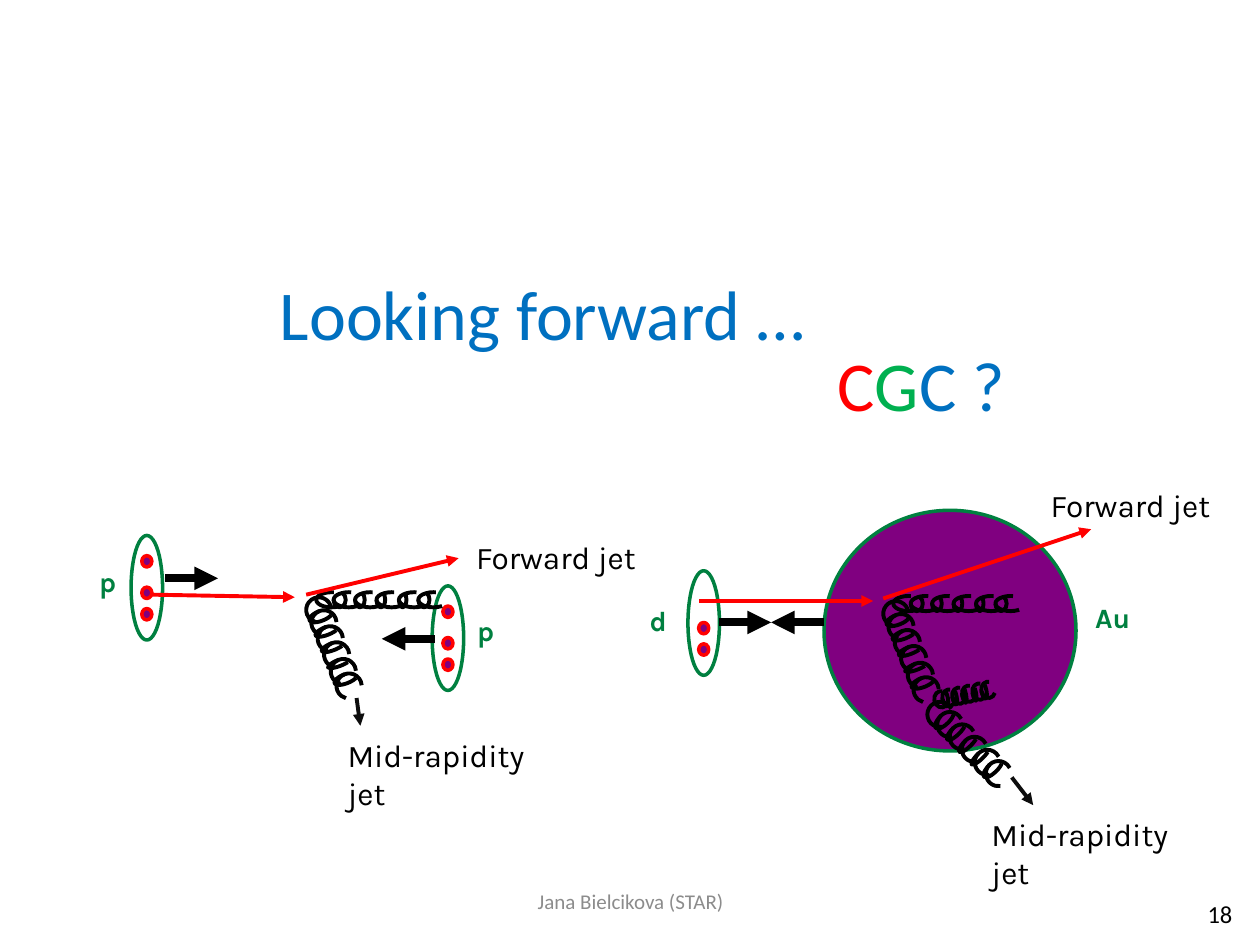
"""Build the slide on forward jets in p+p and d+Au collisions."""
from math import cos, radians, sin

from lxml.etree import SubElement
from pptx import Presentation
from pptx.dml.color import RGBColor
from pptx.enum.shapes import MSO_CONNECTOR, MSO_SHAPE
from pptx.enum.text import MSO_ANCHOR, MSO_AUTO_SIZE, PP_ALIGN
from pptx.oxml.ns import qn
from pptx.util import Pt

PX = 9144
COLORS = {
    "blue": "0070C0", "red": "FF0000", "green": "00B050", "black": "000000",
    "soft_black": "0D0D0D", "outline": "008040", "nucleus": "800080", "gray": "8C8C8C",
}

TITLE = ((212, 210, 441, 77), [("Looking forward …", "blue")])
QUESTION = ((655, 266, 154, 77), [("C", "red"), ("G", "green"), ("C ?", "blue")])
FOOTER = ((342, 695, 317, 40), [("Jana Bielcikova (STAR)", "gray")])
PAGE = ((755, 705, 233, 40), [("18", "black")])

COLLISIONS = [
    {
        "nuclei": [],
        "nucleons": [((104, 425), (16, 41, 58)), ((343, 465), (16, 41, 58))],
        "coils": [((263, 476), 0, 81, (24, 12)), ((253, 484), 68.3, 65, (20, 20))],
        "arrows": [
            ((121, 472), (234, 474), "red", 2.25),
            ((243, 472), (364, 443), "red", 2.25),
            ((283, 554), (286, 576), "soft_black", 2.25),
            ((131, 459), (173, 459), "black", 4.5),
            ((345, 507), (303, 507), "black", 4.5),
        ],
        "beams": [("p", (62, 443, 47, 37)), ("p", (362, 482, 47, 37))],
        "jets": [("Forward jet", (368, 422, 147, 40), False),
                 ("Mid-rapidity jet", (266, 579, 188, 40), True)],
    },
    {
        "nuclei": [(654, 405, 200, 191)],
        "nucleons": [((546, 453), (41, 58))],
        "coils": [((721, 479), 0, 81, (24, 12)), ((746, 567), 45.3, 66, (20, 20)),
                  ((711, 487), 68.3, 65, (20, 20)), ((747, 555), -11.3, 38, (11, 13))],
        "arrows": [
            ((571, 494), (612, 494), "black", 4.5),
            ((654, 494), (612, 494), "black", 4.5),
            ((555, 477), (693, 477), "red", 2.25),
            ((803, 617), (820, 639), "soft_black", 2.25),
            ((701, 475), (866, 420), "red", 2.25),
        ],
        "beams": [("d", (496, 474, 53, 37)), ("Au", (846, 475, 74, 30))],
        "jets": [("Forward jet", (824, 381, 147, 40), False),
                 ("Mid-rapidity jet", (777, 642, 188, 40), True)],
    },
]

LOOP_STEPS = (0, 0.17, 0.38, 0.59, 0.81, 1)
RETURN_WIDTHS = (0, 0.4, 0.32, 0.29, 0.25, 0.37)
LOOP_ANGLES = (215.8, 108.26)
RETURN_ANGLES = (108, 0)


def emu(*lengths):
    return [round(length * PX) for length in lengths]


def rgb(color):
    return RGBColor.from_string(COLORS[color])


def write(holder, runs, size, font="Calibri", align=PP_ALIGN.LEFT,
          anchor=MSO_ANCHOR.TOP, wrap=False, bold=False):
    frame = holder.text_frame
    frame.auto_size = MSO_AUTO_SIZE.NONE
    frame.word_wrap = wrap
    frame.vertical_anchor = anchor
    line = frame.paragraphs[0]
    line.alignment = align
    for words, color in runs:
        run = line.add_run()
        run.text = words
        run.font.size, run.font.name, run.font.bold = Pt(size), font, bold
        run.font.color.rgb = rgb(color)


def outlined(group, preset, box, line, width, fill=None):
    outline = group.shapes.add_shape(preset, *emu(*box))
    outline.shadow.inherit = False
    outline.line.color.rgb = rgb(line)
    outline.line.width = Pt(width)
    if fill:
        outline.fill.solid()
        outline.fill.fore_color.rgb = rgb(fill)
    else:
        outline.fill.background()
    return outline


def add_arc(group, center, size, angle, ends):
    (x, y), (width, height) = center, size
    box = (x - width / 2, y - height / 2, width, height)
    arc = outlined(group, MSO_SHAPE.ARC, box, "black", 2.25)
    for index, degrees in enumerate(ends):
        arc.adjustments[index] = degrees * 0.6
    arc.rotation = (180 + angle) % 360


def add_coil(group, start, angle, length, size):
    width, height = size

    def along(distance):
        return (start[0] + distance * cos(radians(angle)),
                start[1] + distance * sin(radians(angle)))

    for step, share in zip(LOOP_STEPS, RETURN_WIDTHS):
        add_arc(group, along(step * length), size, angle, LOOP_ANGLES)
        if share:
            back = along(step * length - width * (1 - share) / 2)
            add_arc(group, back, (width * share, height), angle, RETURN_ANGLES)


def add_nucleon(group, corner, quarks):
    left, top = corner
    outlined(group, MSO_SHAPE.OVAL, (left, top, 25, 83), "outline", 2)
    for drop in quarks:
        outlined(group, MSO_SHAPE.OVAL, (left + 8.5, top + drop, 8, 9), "red", 2, "nucleus")


def add_arrow(group, start, end, color, width):
    arrow = group.shapes.add_connector(MSO_CONNECTOR.STRAIGHT, *emu(*start, *end))
    arrow.line.color.rgb = rgb(color)
    arrow.line.width = Pt(width)
    SubElement(arrow.line._get_or_add_ln(), qn("a:tailEnd"), type="triangle")
    SubElement(arrow._element.spPr, qn("a:effectLst"))


def add_collision(slide, collision):
    group = slide.shapes.add_group_shape()
    for box in collision["nuclei"]:
        outlined(group, MSO_SHAPE.OVAL, box, "outline", 2, "nucleus")
    for nucleon in collision["nucleons"]:
        add_nucleon(group, *nucleon)
    for coil in collision["coils"]:
        add_coil(group, *coil)
    for arrow in collision["arrows"]:
        add_arrow(group, *arrow)
    for beam, box in collision["beams"]:
        write(group.shapes.add_textbox(*emu(*box)), [(beam, "outline")], 16, "Karla",
              PP_ALIGN.CENTER, MSO_ANCHOR.MIDDLE, True, True)
    for jet, box, wrap in collision["jets"]:
        write(group.shapes.add_textbox(*emu(*box)), [(jet, "black")], 18, "Karla", wrap=wrap)


def main():
    deck = Presentation()
    deck.slide_width, deck.slide_height = emu(1000, 750)
    slide = deck.slides.add_slide(deck.slide_layouts[5])

    box, runs = TITLE
    title = slide.shapes.title
    title.left, title.top, title.width, title.height = emu(*box)
    write(title, runs, 40)

    for collision in COLLISIONS:
        add_collision(slide, collision)

    for (box, runs), size, align, anchor, wrap in (
        (QUESTION, 40, PP_ALIGN.LEFT, MSO_ANCHOR.TOP, False),
        (FOOTER, 12, PP_ALIGN.CENTER, MSO_ANCHOR.MIDDLE, True),
        (PAGE, 14, PP_ALIGN.RIGHT, MSO_ANCHOR.MIDDLE, True),
    ):
        write(slide.shapes.add_textbox(*emu(*box)), runs, size,
              align=align, anchor=anchor, wrap=wrap)
    deck.save("out.pptx")


if __name__ == "__main__":
    main()
